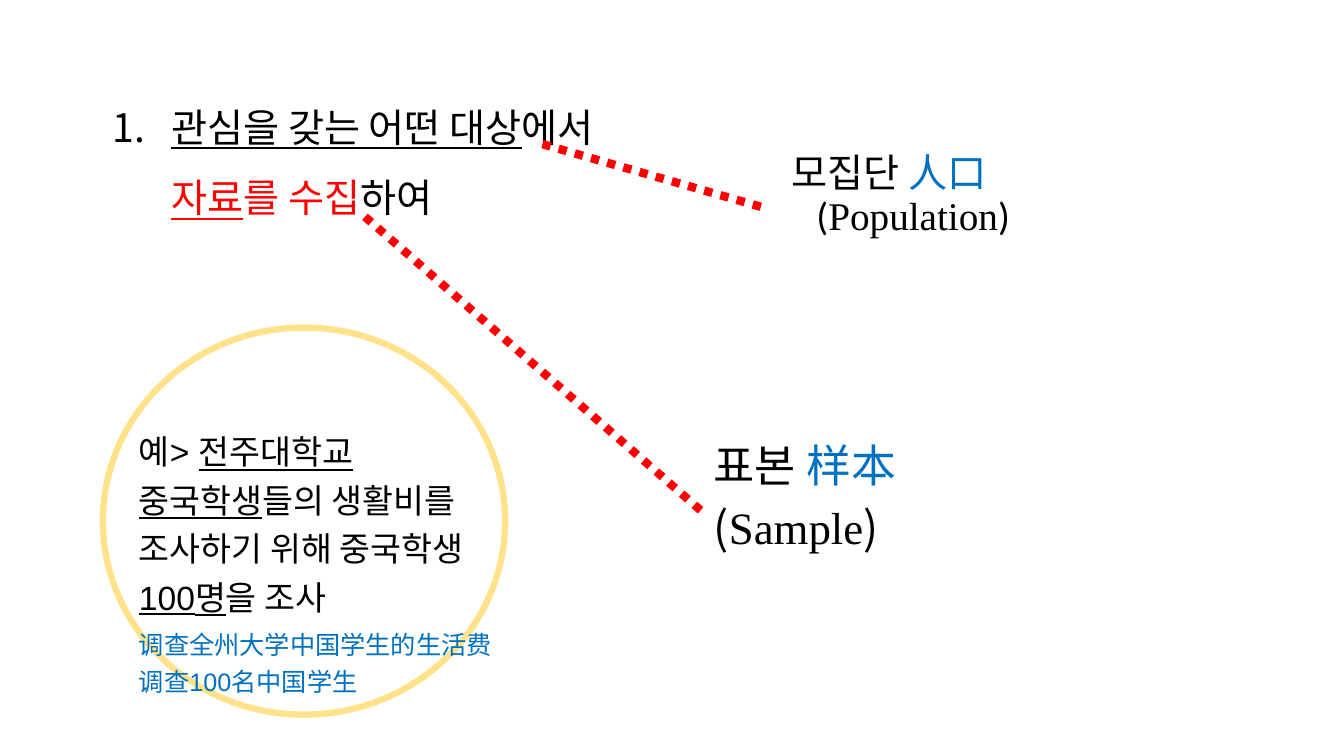
from lxml import etree
from pptx import Presentation
from pptx import util as u
from pptx.dml.color import RGBColor
from pptx.enum import dml, shapes, text
from pptx.oxml import ns

BLACK, RED, BLUE, GOLD = "000000", "FF0000", "0070C0", "FFC000"
SANS, LATIN, SERIF, BODY = "Noto Sans CJK KR", "Arial", "Times New Roman", "Calibri"


def rgb(value):
    return RGBColor.from_string(value)


def add_xml(parent, tag, **attributes):
    return etree.SubElement(parent, ns.qn(tag), attributes)


class SlideBuilder:
    def __init__(self, slide, east_asian_font):
        self.slide = slide
        self.east_asian_font = east_asian_font

    def run(self, paragraph, content, size, font, color=BLACK, underline=False):
        run = paragraph.add_run()
        run.text = content
        run.font.size = u.Pt(size)
        run.font.name = font
        run.font.color.rgb = rgb(color)
        run.font.underline = underline
        add_xml(run.font._element, "a:ea", typeface=self.east_asian_font)

    def text_box(self, left, top, width, height, paragraphs, size, spacing=1.0,
                 before=6, hanging=0, numbered=False, grow=False):
        box = self.slide.shapes.add_textbox(
            u.Inches(left), u.Inches(top), u.Inches(width), u.Inches(height))
        frame = box.text_frame
        frame.word_wrap = True
        if grow:
            frame.auto_size = text.MSO_AUTO_SIZE.SHAPE_TO_FIT_TEXT
        for index, runs in enumerate(paragraphs):
            paragraph = frame.add_paragraph() if index else frame.paragraphs[0]
            paragraph.line_spacing = spacing
            paragraph.space_before = u.Pt(before)
            properties = paragraph._p.get_or_add_pPr()
            if hanging:
                properties.set("marL", str(u.Inches(hanging)))
                properties.set("indent", str(-u.Inches(hanging)))
            if numbered:
                add_xml(properties, "a:buFont", typeface=self.east_asian_font)
                add_xml(properties, "a:buAutoNum", type="arabicPeriod")
            for content, style in runs:
                self.run(paragraph, content, **{"size": size, "font": LATIN, **style})

    def ring(self, left, top, width, height, color, weight, opacity):
        ring = self.slide.shapes.add_shape(
            shapes.MSO_SHAPE.OVAL, u.Inches(left), u.Inches(top),
            u.Inches(width), u.Inches(height))
        ring.shadow.inherit = False
        ring.fill.background()
        ring.line.color.rgb = rgb(color)
        ring.line.width = u.Pt(weight)
        tint = ring.line._ln.find(".//" + ns.qn("a:srgbClr"))
        add_xml(tint, "a:alpha", val=str(opacity * 1000))

    def dotted_line(self, start, end, color=RED, weight=6):
        line = self.slide.shapes.add_connector(
            shapes.MSO_CONNECTOR.STRAIGHT, *map(u.Inches, start + end))
        line.line.color.rgb = rgb(color)
        line.line.width = u.Pt(weight)
        line.line.dash_style = dml.MSO_LINE.ROUND_DOT
        add_xml(line._element.spPr, "a:effectLst")


def main():
    presentation = Presentation()
    presentation.slide_width = u.Inches(13.33)
    presentation.slide_height = u.Inches(7.5)
    slide = presentation.slides.add_slide(presentation.slide_layouts[6])
    builder = SlideBuilder(slide, SANS)
    sans, serif, body = {"font": SANS}, {"font": SERIF}, {"font": BODY}
    chinese = {"font": SANS, "color": BLUE}
    underlined = {"underline": True}

    builder.text_box(7.75, 1.48, 2.9, 1.34, [[
        ("모집단 ", sans), ("人口 ", chinese),
        ("(", body), ("Population", serif), (")", body),
    ]], size=28, spacing=0.9, before=10, hanging=0.25)
    builder.text_box(1.02, 0.74, 5.13, 3.66, [[
        ("관심을 갖는 어떤 대상", underlined), ("에서 ", {}),
        ("자료", {"color": RED, "underline": True}),
        ("를 수집", {"color": RED}), ("하여", {}),
    ]], size=28, spacing=1.5, hanging=0.58, numbered=True)
    builder.ring(1.02, 3.25, 3.99, 3.84, GOLD, weight=4.5, opacity=45)
    builder.text_box(6.98, 4.29, 3.65, 1.79, [
        [("표본 ", sans), ("样本", chinese)],
        [("(", sans), ("Sample", serif), (")", sans)],
    ], size=32, hanging=0.38)
    builder.dotted_line((5.38, 1.43), (7.61, 2.07))
    builder.dotted_line((3.62, 2.15), (6.98, 5.09))
    small_blue = {"size": 18, "color": BLUE}
    builder.text_box(1.28, 4.15, 3.73, 2.83, [
        [("예> ", {}), ("전주대학교 중국학생", underlined),
         ("들의 생활비를 조사하기 위해 중국학생", {}),
         ("100명", underlined), ("을 조사", {})],
        [("调查全州大学中国学生的生活费调查100名中国学生", small_blue)],
    ], size=24, spacing=1.2, before=5, grow=True)
    presentation.save("out.pptx")


if __name__ == "__main__":
    main()
